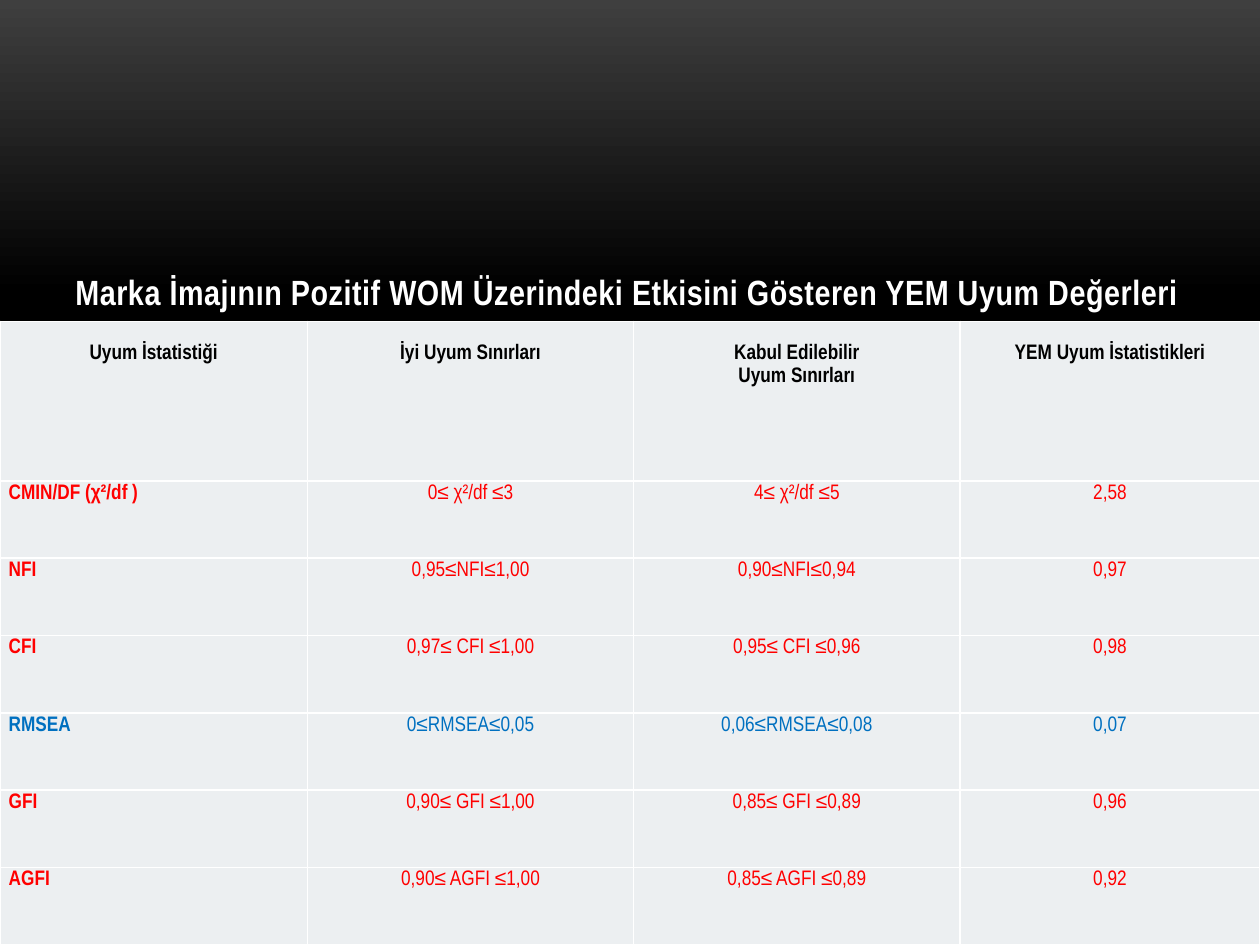
from lxml.etree import SubElement
from pptx import Presentation
from pptx.dml.color import RGBColor
from pptx.enum.text import MSO_ANCHOR as Anchor, PP_ALIGN as Align
from pptx.oxml.ns import qn
from pptx.util import Pt

FONT = "Arial Narrow"
COLORS = {
    "top": "3F3F3F", "black": "000000", "white": "FFFFFF",
    "cell": "ECEFF1", "red": "FF0000", "blue": "0070C0",
}
TITLE = "Marka İmajının Pozitif WOM Üzerindeki Etkisini Gösteren YEM Uyum Değerleri"
HEADER = ["Uyum İstatistiği", "İyi Uyum Sınırları",
          "Kabul Edilebilir\nUyum Sınırları", "YEM Uyum İstatistikleri"]
FIT_ROWS = [
    ["CMIN/DF (χ²/df )", "0≤ χ²/df ≤3", "4≤ χ²/df ≤5", "2,58"],
    ["NFI", "0,95≤NFI≤1,00", "0,90≤NFI≤0,94", "0,97"],
    ["CFI", "0,97≤ CFI ≤1,00", "0,95≤ CFI ≤0,96", "0,98"],
    ["RMSEA", "0≤RMSEA≤0,05", "0,06≤RMSEA≤0,08", "0,07"],
    ["GFI", "0,90≤ GFI ≤1,00", "0,85≤ GFI ≤0,89", "0,96"],
    ["AGFI", "0,90≤ AGFI ≤1,00", "0,85≤ AGFI ≤0,89", "0,92"],
]
COLUMN_WIDTHS = [175.68, 186.48, 186.48, 171.36]
HEADER_HEIGHT = 91.2


def rgb(name):
    return RGBColor.from_string(COLORS[name])


def style_font(font, size, color, bold):
    font.name = FONT
    font.size = Pt(size)
    font.bold = bold
    font.color.rgb = rgb(color)


def paint_background(page):
    fill = page.background.fill
    fill.gradient()
    fill.gradient_angle = 270
    for stop, color, position in zip(fill.gradient_stops, ("top", "black"), (0, 0.31)):
        stop.color.rgb = rgb(color)
        stop.position = position


def add_title(page, left, top, width, height):
    box = page.shapes.add_textbox(Pt(left), Pt(top), Pt(width), Pt(height))
    frame = box.text_frame
    frame.word_wrap = True
    frame.text = TITLE
    para = frame.paragraphs[0]
    para.space_after = Pt(6)
    span = para.runs[0]
    style_font(span.font, 20, "white", True)
    span.font._element.set("spc", "30")


def add_borders(cell):
    properties = cell._tc.get_or_add_tcPr()
    for index, side in enumerate(("lnL", "lnR", "lnT", "lnB")):
        line = SubElement(properties, qn(f"a:{side}"), w=str(Pt(1)))
        properties.remove(line)
        properties.insert(index, line)
        fill = SubElement(line, qn("a:solidFill"))
        SubElement(fill, qn("a:srgbClr"), val=COLORS["white"])


def fill_cell(cell, text, color, bold, align, top_margin):
    cell.fill.solid()
    cell.fill.fore_color.rgb = rgb("cell")
    cell.margin_left = cell.margin_right = Pt(5)
    cell.margin_top = Pt(top_margin)
    cell.margin_bottom = 0
    cell.vertical_anchor = Anchor.TOP
    cell.text_frame.text = text
    for para in cell.text_frame.paragraphs:
        para.alignment = align
        para.line_spacing = 1.15
        for span in para.runs:
            style_font(span.font, 12, color, bold)
    add_borders(cell)


def add_fit_table(page, left, top, width, height):
    rows = [HEADER] + FIT_ROWS
    table = page.shapes.add_table(
        len(rows), len(HEADER), Pt(left), Pt(top), Pt(width), Pt(height)).table
    table.first_row = table.horz_banding = False
    for column, column_width in zip(table.columns, COLUMN_WIDTHS):
        column.width = Pt(column_width)
    row_height = (height - HEADER_HEIGHT) / len(FIT_ROWS)
    for r, values in enumerate(rows):
        is_header = r == 0
        table.rows[r].height = Pt(HEADER_HEIGHT if is_header else row_height)
        color = "black" if is_header else "blue" if values[0] == "RMSEA" else "red"
        for c, text in enumerate(values):
            is_label = c == 0 and not is_header
            fill_cell(table.cell(r, c), text, color, is_header or c == 0,
                      Align.LEFT if is_label else Align.CENTER,
                      11.4 if is_header else 0)


def main():
    deck = Presentation()
    deck.slide_width, deck.slide_height = Pt(720), Pt(540)
    page = deck.slides.add_slide(deck.slide_layouts[6])
    paint_background(page)
    add_title(page, 36, 151.2, 648, 64.8)
    add_fit_table(page, 0, 183.6, 720, 356.4)
    deck.save("out.pptx")


if __name__ == "__main__":
    main()
